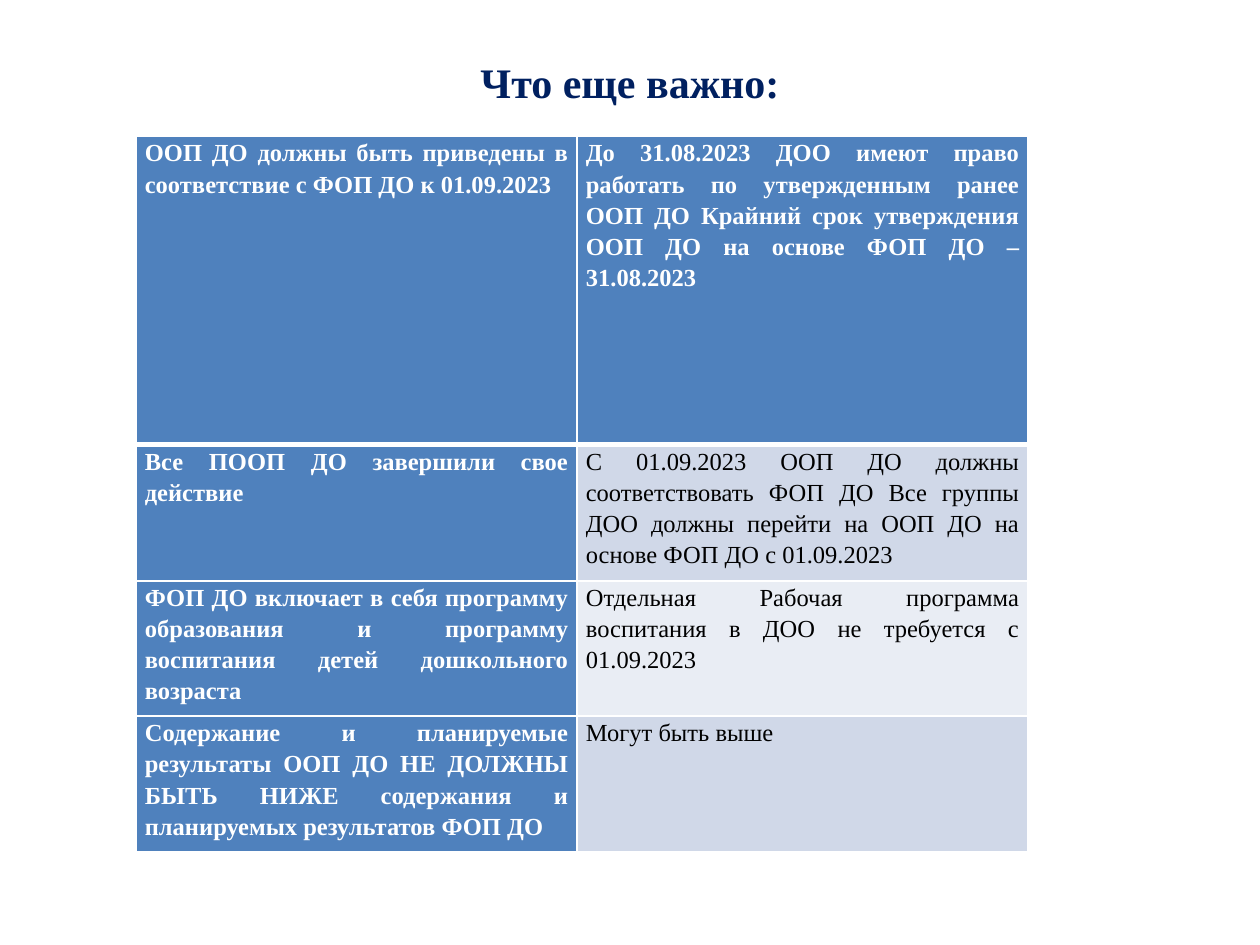
from pptx import Presentation
from pptx.dml.color import RGBColor
from pptx.enum.text import MSO_ANCHOR, PP_ALIGN
from pptx.oxml.ns import qn
from pptx.util import Inches, Pt
from lxml.etree import SubElement

FONT = "Times New Roman"
NAVY = RGBColor(0x00, 0x20, 0x60)
BLUE = RGBColor(0x4F, 0x81, 0xBD)
BAND_DARK = RGBColor(0xD0, 0xD8, 0xE8)
BAND_LIGHT = RGBColor(0xE9, 0xED, 0xF4)
WHITE = RGBColor(0xFF, 0xFF, 0xFF)
BLACK = RGBColor(0x00, 0x00, 0x00)

TITLE = "Что еще важно:"
REQUIREMENTS = [
    ("ООП ДО должны быть приведены в соответствие с ФОП ДО к 01.09.2023",
     "До 31.08.2023 ДОО имеют право работать по утвержденным ранее ООП ДО "
     "Крайний срок утверждения ООП ДО на основе ФОП ДО – 31.08.2023"),
    ("Все ПООП ДО завершили свое действие",
     "С 01.09.2023 ООП ДО должны соответствовать ФОП ДО Все группы ДОО "
     "должны перейти на ООП ДО на основе ФОП ДО с 01.09.2023"),
    ("ФОП ДО включает в себя программу образования и программу воспитания "
     "детей дошкольного возраста",
     "Отдельная Рабочая программа воспитания в ДОО не требуется с 01.09.2023"),
    ("Содержание и планируемые результаты ООП ДО НЕ ДОЛЖНЫ БЫТЬ НИЖЕ "
     "содержания и планируемых результатов ФОП ДО",
     "Могут быть выше"),
]
COLUMN_WIDTHS = [3.5, 3.58]
ROW_HEIGHTS = [2.45, 1.08, 0.81, 1.08]


def format_paragraph(paragraph, size, color, bold, alignment):
    paragraph.alignment = alignment
    for run in paragraph.runs:
        run.font.name = FONT
        run.font.size = Pt(size)
        run.font.bold = bold
        run.font.color.rgb = color


def set_borders(cell, bottom_width):
    """Draw white cell borders; must run before the cell's fill is set."""
    properties = cell._tc.get_or_add_tcPr()
    for side, width in (("L", 1), ("R", 1), ("T", 1), ("B", bottom_width)):
        line = SubElement(properties, qn(f"a:ln{side}"), w=str(Pt(width)))
        fill = SubElement(line, qn("a:solidFill"))
        SubElement(fill, qn("a:srgbClr"), val=str(WHITE))


def add_title(slide, left, top, width, height):
    box = slide.shapes.add_textbox(left, top, width, height)
    text_frame = box.text_frame
    text_frame.word_wrap = True
    text_frame.vertical_anchor = MSO_ANCHOR.MIDDLE
    text_frame.text = TITLE
    format_paragraph(text_frame.paragraphs[0], 24, NAVY, True, PP_ALIGN.CENTER)


def fill_cell(cell, text, row, column):
    is_heading = row == 0 or column == 0
    set_borders(cell, 3 if row == 0 else 1)
    cell.fill.solid()
    band = BAND_DARK if row % 2 else BAND_LIGHT
    cell.fill.fore_color.rgb = BLUE if is_heading else band
    cell.margin_left = cell.margin_right = Inches(0.07)
    cell.margin_top = cell.margin_bottom = 0
    cell.text_frame.text = text
    paragraph = cell.text_frame.paragraphs[0]
    paragraph.line_spacing = 1.15
    format_paragraph(paragraph, 14, WHITE if is_heading else BLACK,
                     is_heading, PP_ALIGN.JUSTIFY)


def add_requirements_table(slide, left, top, width, height):
    frame = slide.shapes.add_table(
        len(ROW_HEIGHTS), len(COLUMN_WIDTHS), left, top, width, height)
    table = frame.table
    table.first_col = True
    for column, share in zip(table.columns, COLUMN_WIDTHS):
        column.width = int(width * share / sum(COLUMN_WIDTHS))
    for row, share in zip(table.rows, ROW_HEIGHTS):
        row.height = int(height * share / sum(ROW_HEIGHTS))
    for row, texts in enumerate(REQUIREMENTS):
        for column, text in enumerate(texts):
            fill_cell(table.cell(row, column), text, row, column)


def main():
    presentation = Presentation()
    presentation.slide_width = Inches(10)
    presentation.slide_height = Inches(7.5)
    slide = presentation.slides.add_slide(presentation.slide_layouts[6])
    add_title(slide, Inches(0.5), Inches(0.3), Inches(9), Inches(0.7))
    add_requirements_table(slide, Inches(1.08), Inches(1.08),
                           Inches(sum(COLUMN_WIDTHS)), Inches(sum(ROW_HEIGHTS)))
    presentation.save("out.pptx")


if __name__ == "__main__":
    main()
